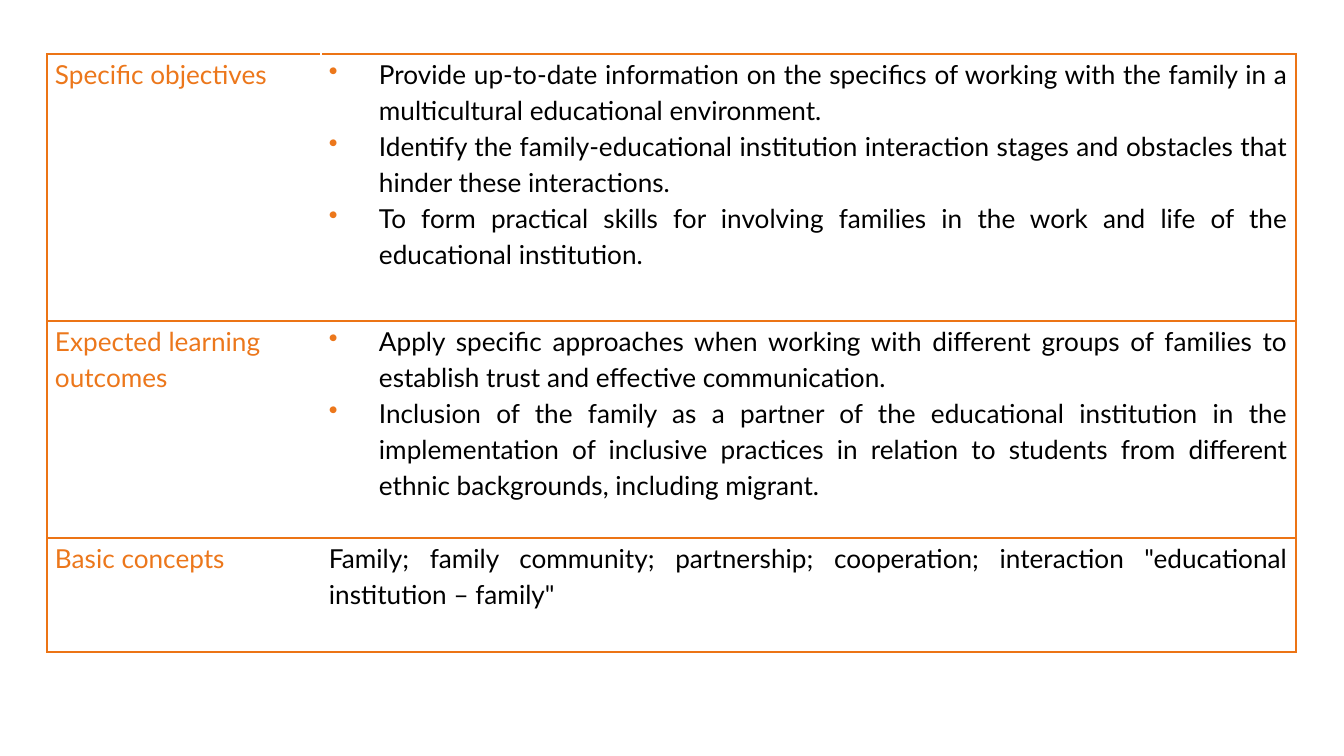
"""Build a slide with a table of objectives, outcomes and concepts."""
from lxml.etree import SubElement
from pptx import Presentation
from pptx.dml.color import RGBColor
from pptx.enum.text import PP_ALIGN as Align
from pptx.oxml.ns import qn
from pptx.util import Emu, Pt

COLORS = {"label": "EC771B", "border": "EC7415", "text": "000000"}
FONT = "Lato"
ROWS = [
    {"label": "Specific objectives", "height": 267, "bulleted": True, "items": [
        "Provide up-to-date information on the specifics of working with the family "
        "in a multicultural educational environment.",
        "Identify the family-educational institution interaction stages and obstacles "
        "that hinder these interactions.",
        "To form practical skills for involving families in the work and life of the "
        "educational institution.",
    ]},
    {"label": "Expected learning outcomes", "height": 217, "bulleted": True, "items": [
        "Apply specific approaches when working with different groups of families to "
        "establish trust and effective communication.",
        "Inclusion of the family as a partner of the educational institution in the "
        "implementation of inclusive practices in relation to students from different "
        "ethnic backgrounds, including migrant.",
    ]},
    {"label": "Basic concepts", "height": 114, "bulleted": False, "items": [
        'Family; family community; partnership; cooperation; interaction '
        '"educational institution – family"',
    ]},
]
COLUMNS = [274, 975]
LEFT, TOP = 47, 54
INSET, INDENT = 8, 50


def px(length):
    return Emu(round(length * 914400 / 134.4))


def add_border(cell, side):
    line = SubElement(cell._tc.get_or_add_tcPr(), qn(f"a:ln{side}"), w=str(Pt(0.75)))
    fill = SubElement(line, qn("a:solidFill"))
    SubElement(fill, qn("a:srgbClr"), val=COLORS["border"])


def add_bullet(paragraph):
    properties = paragraph._p.get_or_add_pPr()
    properties.set("marL", str(px(INDENT)))
    properties.set("indent", str(-px(INDENT)))
    color = SubElement(properties, qn("a:buClr"))
    SubElement(color, qn("a:srgbClr"), val=COLORS["label"])
    SubElement(properties, qn("a:buChar"), char="•")


def fill_cell(cell, items, color, align, bulleted, outer_side):
    for side in (outer_side, "T", "B"):
        add_border(cell, side)
    cell.fill.background()
    cell.margin_left = cell.margin_right = px(INSET)
    cell.margin_top = cell.margin_bottom = 0
    frame = cell.text_frame
    frame.text = "\n".join(items)
    for paragraph in frame.paragraphs:
        if bulleted:
            add_bullet(paragraph)
        paragraph.alignment = align
        paragraph.line_spacing = 1.15
        paragraph.font.name = FONT
        paragraph.font.size = Pt(14)
        paragraph.font.color.rgb = RGBColor.from_string(COLORS[color])


def main():
    presentation = Presentation()
    presentation.slide_width, presentation.slide_height = px(1344), px(756)
    slide = presentation.slides.add_slide(presentation.slide_layouts[6])
    height = sum(row["height"] for row in ROWS)
    table = slide.shapes.add_table(
        len(ROWS), len(COLUMNS), px(LEFT), px(TOP), px(sum(COLUMNS)), px(height)).table
    table.first_row = table.horz_banding = False
    for column, width in zip(table.columns, COLUMNS):
        column.width = px(width)
    for index, row in enumerate(ROWS):
        table.rows[index].height = px(row["height"])
        fill_cell(table.cell(index, 0), [row["label"]], "label", Align.LEFT, False, "L")
        fill_cell(table.cell(index, 1), row["items"], "text", Align.JUSTIFY,
                  row["bulleted"], "R")
    presentation.save("out.pptx")


if __name__ == "__main__":
    main()
